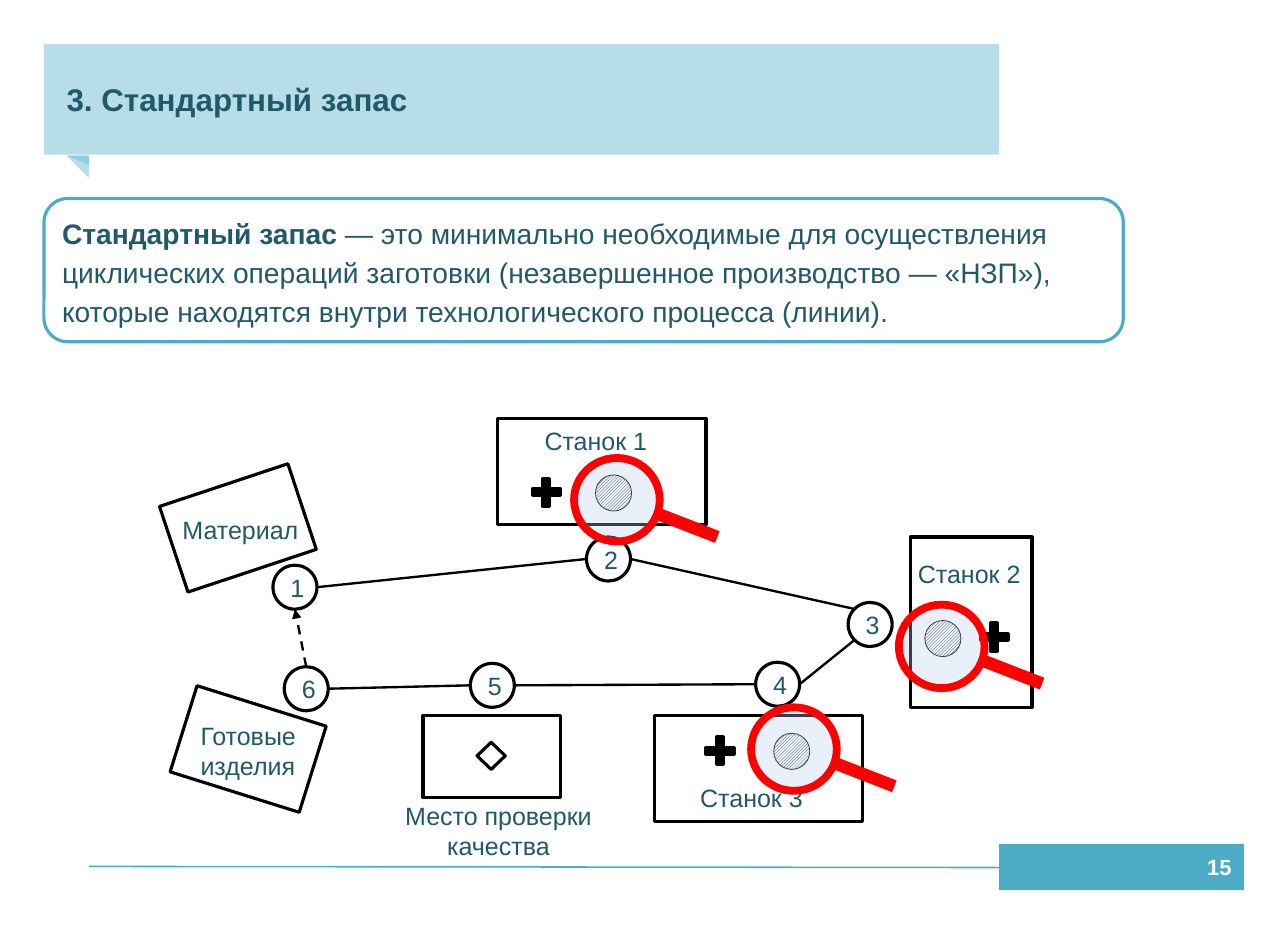
import lxml.etree
import pptx
import pptx.dml.color
import pptx.enum.dml
import pptx.enum.shapes
import pptx.enum.text
import pptx.oxml.ns
import pptx.util

PX = 9144
TEAL, PALE, INK, RED = "4BACC6", "B7DEE8", "215968", "FF0000"
BLACK, WHITE = "000000", "FFFFFF"
SHAPES = pptx.enum.shapes.MSO_SHAPE
ALIGN = pptx.enum.text.PP_ALIGN
ANCHOR = pptx.enum.text.MSO_ANCHOR


def color(value):
    """Turn a hex string into a colour."""
    return pptx.dml.color.RGBColor.from_string(value)


def add_child(parent, tag, **attributes):
    """Append a drawing element with the given attributes."""
    child = lxml.etree.SubElement(parent, pptx.oxml.ns.qn(tag))
    for key, value in attributes.items():
        child.set(key, value)


def add_figure(slide, kind, box, fill=None, line=None, width=2, angle=0):
    """Add a preset shape with a flat fill and outline."""
    shape = slide.shapes.add_shape(kind, *[length * PX for length in box])
    shape.shadow.inherit = False
    shape.rotation = angle
    if fill:
        shape.fill.solid()
        shape.fill.fore_color.rgb = color(fill)
    else:
        shape.fill.background()
    if line:
        shape.line.color.rgb = color(line)
        shape.line.width = pptx.util.Pt(width)
    else:
        shape.line.fill.background()
    return shape


def add_line(slide, start, end, ink=BLACK, width=1.5):
    """Add a straight line between two points."""
    line = slide.shapes.add_connector(
        pptx.enum.shapes.MSO_CONNECTOR.STRAIGHT,
        *[round(length * PX) for length in (*start, *end)])
    line.line.color.rgb = color(ink)
    line.line.width = pptx.util.Pt(width)
    add_child(line._element.spPr, "a:effectLst")
    return line


def write(shape, text, size=16, ink=INK, bold=False, align=ALIGN.LEFT,
          anchor=ANCHOR.TOP, insets=(10, 5, 10, 5)):
    """Put formatted text into a shape."""
    frame = shape.text_frame
    frame.word_wrap = True
    frame.vertical_anchor = anchor
    frame.margin_left, frame.margin_top, frame.margin_right, frame.margin_bottom = [
        inset * PX for inset in insets]
    frame.text = text
    for para in frame.paragraphs:
        para.alignment = align
        for span in para.runs:
            style(span, size, ink, bold)


def style(span, size, ink, bold):
    """Set the font of a run."""
    span.font.name = "Arial"
    span.font.size = pptx.util.Pt(size)
    span.font.bold = bold
    span.font.color.rgb = color(ink)


def add_label(slide, box, text, align=ALIGN.LEFT):
    """Add a caption of the diagram."""
    label = slide.shapes.add_textbox(*[length * PX for length in box])
    write(label, text, align=align)


def add_header(slide, box, text):
    """Draw the title band with its folded corner."""
    left, top, width, height = box
    bottom = top + height
    for fold_box, fill in (((left + 20, bottom + 1, 20, 20), PALE),
                           ((left + 26, bottom - 5, 8, 20), "93CDDD")):
        fold = add_figure(slide, SHAPES.RIGHT_TRIANGLE, fold_box, fill, angle=270)
        fold._element.spPr.find(pptx.oxml.ns.qn("a:xfrm")).set("flipH", "1")
    band = add_figure(slide, SHAPES.RECTANGLE, box, PALE)
    write(band, text, 20, bold=True, anchor=ANCHOR.MIDDLE, insets=(20, 0, 10, 0))


def add_footer(slide, box, number):
    """Draw the rule and the page number block."""
    left, top, width, height = box
    add_line(slide, (left, top + 21), (79, top + 20), TEAL, 1)
    block = add_figure(slide, SHAPES.RECTANGLE, box, TEAL)
    write(block, number, 14, WHITE, True, ALIGN.RIGHT, ANCHOR.MIDDLE, (11, 6, 11, 6))


def add_definition(slide, box, term, meaning):
    """Draw the rounded box with a term and its meaning."""
    panel = add_figure(slide, SHAPES.ROUNDED_RECTANGLE, box, WHITE, TEAL)
    write(panel, term, 18, bold=True)
    para = panel.text_frame.paragraphs[0]
    para.line_spacing = 1.15
    para.space_before = para.space_after = pptx.util.Pt(6)
    span = para.add_run()
    span.text = meaning
    style(span, 18, INK, False)


def add_machine(slide, box, text, label, cross, part):
    """Draw a machine with its label, cross and hatched workpiece."""
    left, top = box[:2]
    add_figure(slide, SHAPES.RECTANGLE, box, line=BLACK)
    plus = add_figure(slide, SHAPES.CROSS,
                      (left + cross[0], top + cross[1], 25, 25), BLACK, BLACK)
    plus.adjustments[0] = 0.38
    piece = add_figure(slide, SHAPES.OVAL, (left + part[0], top + part[1], 32, 32),
                       WHITE, BLACK, 0.5)
    piece.fill.patterned()
    piece.fill.pattern = pptx.enum.dml.MSO_PATTERN.DARK_UPWARD_DIAGONAL
    piece.fill.fore_color.rgb = color(BLACK)
    piece.fill.back_color.rgb = color(WHITE)
    add_label(slide, (left + label[0], top + label[1], 122, 38), text)


def add_magnifier(slide, left, top):
    """Draw a magnifying glass with a see-through lens."""
    lens = add_figure(slide, SHAPES.OVAL, (left, top, 76, 74), "B8D0ED", RED, 5)
    tint = lens._element.spPr.find(".//" + pptx.oxml.ns.qn("a:srgbClr"))
    add_child(tint, "a:alpha", val="30000")
    add_line(slide, (left + 73, top + 49), (left + 127, top + 70), RED, 8)


def add_route(slide, stations, size):
    """Draw the numbered stations and the loop that joins them."""
    for number, (left, top) in enumerate(stations, 1):
        circle = add_figure(slide, SHAPES.OVAL, (left, top, size, size), line=BLACK)
        write(circle, str(number), align=ALIGN.CENTER, anchor=ANCHOR.MIDDLE)
    west, east, north, south = (0, 0.5), (1, 0.5), (0.5, 0), (0.5, 1)
    sites = [(east, west), (east, (0.15, 0.15)), ((0.15, 0.85), east),
             (west, east), (west, east), (north, south)]
    for index, pair in enumerate(sites):
        ends = (stations[index], stations[(index + 1) % len(stations)])
        start, end = [(left + x * size, top + y * size)
                      for (left, top), (x, y) in zip(ends, pair)]
        link = add_line(slide, start, end)
    link.line.dash_style = pptx.enum.dml.MSO_LINE.DASH
    add_child(link.line._get_or_add_ln(), "a:tailEnd", type="triangle")


def add_process(slide):
    """Draw the production loop with machines, stores and inspection."""
    add_machine(slide, (441, 371, 185, 94), "Станок 1", (32, 1), (31, 53), (87, 50))
    add_machine(slide, (807, 476, 108, 151), "Станок 2", (-3, 14), (62, 76), (13, 74))
    add_machine(slide, (580, 634, 185, 94), "Станок 3", (31, 55), (46, 19), (106, 16))
    add_figure(slide, SHAPES.RECTANGLE, (375, 634, 122, 73), line=BLACK)
    add_figure(slide, SHAPES.DIAMOND, (423, 658, 25, 24), line=BLACK)
    add_label(slide, (343, 705, 198, 64), "Место проверки качества", ALIGN.CENTER)
    add_figure(slide, SHAPES.RECTANGLE, (151, 428, 120, 80), line=BLACK, angle=341.6)
    add_label(slide, (152, 451, 137, 38), "Материал")
    add_figure(slide, SHAPES.RECTANGLE, (160, 624, 120, 80), line=BLACK, angle=17.4)
    add_label(slide, (168, 634, 137, 66), "Готовые\nизделия")
    add_route(slide, [(242, 501), (520, 476), (752, 534),
                      (670, 587), (417, 588), (252, 591)], 39)
    for left, top in ((509, 406), (666, 627), (797, 536)):
        add_magnifier(slide, left, top)


def main():
    """Build and save the slide."""
    deck = pptx.Presentation()
    deck.slide_width, deck.slide_height = 1142 * PX, 827 * PX
    slide = deck.slides.add_slide(deck.slide_layouts[6])
    add_header(slide, (39, 39, 847, 98), "3. Стандартный запас")
    add_footer(slide, (886, 748, 217, 41), "15")
    add_definition(
        slide, (39, 176, 957, 127), "Стандартный запас ",
        "— это минимально необходимые для осуществления циклических операций "
        "заготовки (незавершенное производство — «НЗП»), которые находятся "
        "внутри технологического процесса (линии).")
    add_process(slide)
    deck.save("out.pptx")


if __name__ == "__main__":
    main()
